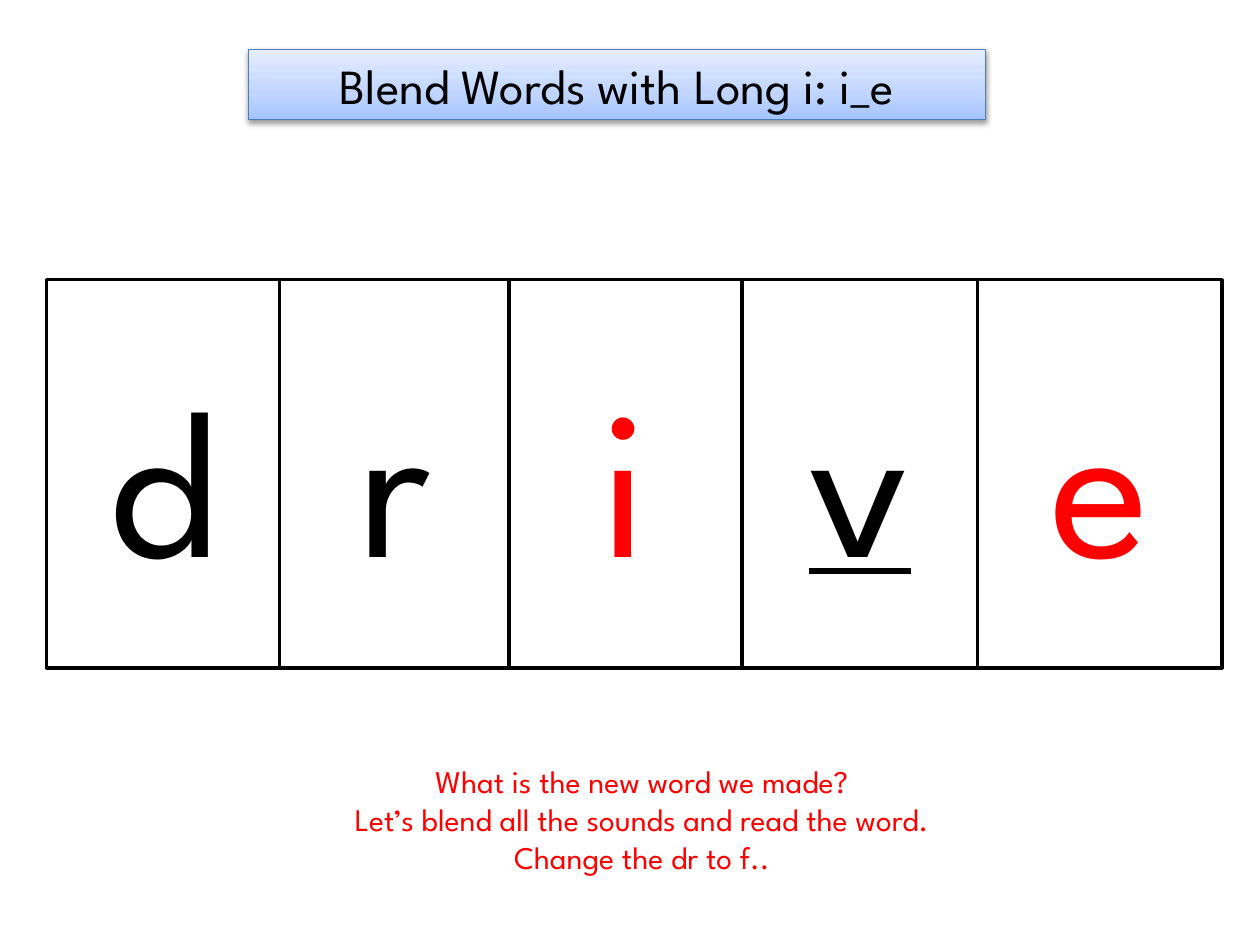
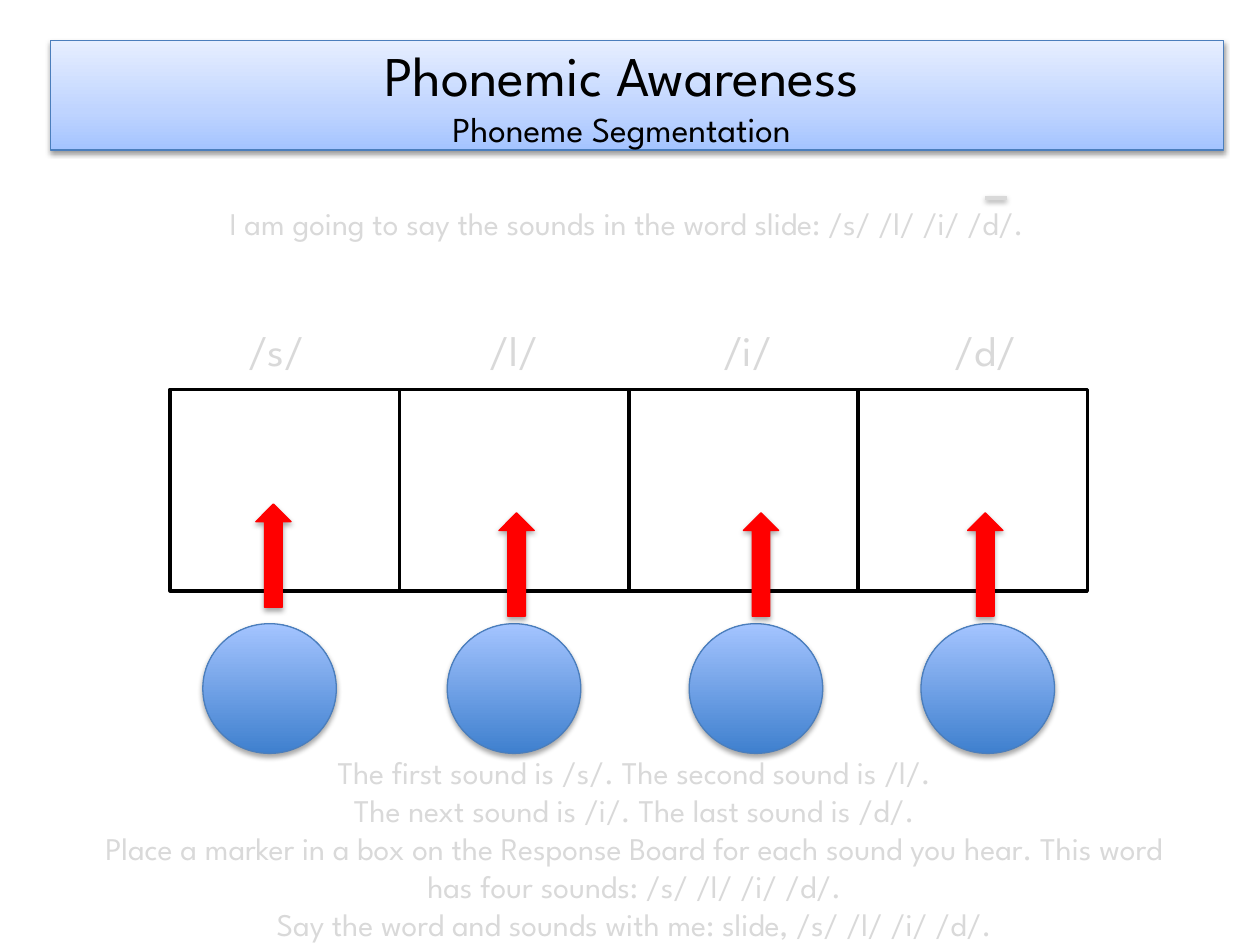
from dataclasses import dataclass
from itertools import pairwise

from lxml import etree
from pptx import Presentation
from pptx.dml.color import RGBColor
from pptx.enum.shapes import MSO_CONNECTOR, MSO_SHAPE as Shape
from pptx.enum.text import MSO_ANCHOR as Anchor, MSO_AUTO_SIZE as AutoSize, PP_ALIGN as Align
from pptx.oxml.ns import nsdecls, qn
from pptx.util import Inches, Pt


@dataclass(frozen=True)
class Theme:
    font: str = "League Spartan"
    ink: str = "000000"
    paper: str = "FFFFFF"
    accent: str = "FF0000"
    muted: str = "D9D9D9"
    edge: str = "4B7EBC"
    band: tuple = ((0, "A4C4FF"), (35, "BFD4FF"), (100, "E6EEFF"))
    marker: tuple = ((0, "3F80CE"), (100, "A4C4FF"))
    letter_size: int = 120
    title_size: int = 32
    word_title_size: int = 28
    label_size: int = 24
    subtitle_size: int = 20
    body_size: int = 18
    thin: float = 0.75
    thick: float = 2


class Deck:
    def __init__(self, theme):
        self.theme = theme
        self.prs = Presentation()
        self.prs.slide_width, self.prs.slide_height = Inches(10), Inches(7.5)
        self.slide = None

    def new_slide(self):
        self.slide = self.prs.slides.add_slide(self.prs.slide_layouts[5])

    def style_text(self, tf, lines, sizes, color, align=Align.CENTER):
        """Fill a frame with lines; sizes holds one type size per line."""
        tf.word_wrap = True
        tf.text = "\n".join(lines)
        for p, size in zip(tf.paragraphs, sizes):
            p.alignment = align
            for r in p.runs:
                r.font.name = self.theme.font
                r.font.size = Pt(size)
                r.font.color.rgb = RGBColor.from_string(color)

    def outline(self, sp, color, width):
        sp.line.color.rgb = RGBColor.from_string(color)
        sp.line.width = Pt(width)

    def gradient(self, sp, stops):
        """Fill from bottom to top; call before the outline is set."""
        marks = "".join(f'<a:gs pos="{pos * 1000}"><a:srgbClr val="{color}"/></a:gs>'
                        for pos, color in stops)
        sp._element.spPr.append(etree.fromstring(
            f'<a:gradFill {nsdecls("a")} rotWithShape="1"><a:gsLst>{marks}</a:gsLst>'
            '<a:lin ang="16200000" scaled="0"/></a:gradFill>'))

    def shadow(self, sp, alpha, distance):
        """Cast a soft shadow downwards; call after the outline is set."""
        spPr = sp._element.spPr
        for old in spPr.findall(qn("a:effectLst")):
            spPr.remove(old)
        spPr.append(etree.fromstring(
            f'<a:effectLst {nsdecls("a")}><a:outerShdw blurRad="{Pt(3.1)}" '
            f'dist="{Pt(distance)}" dir="5400000" rotWithShape="0"><a:srgbClr '
            f'val="{self.theme.ink}"><a:alpha val="{alpha * 1000}"/></a:srgbClr>'
            '</a:outerShdw></a:effectLst>'))

    def title(self, lines, sizes, box, preset="rect"):
        sp = self.slide.shapes.title
        sp.left, sp.top, sp.width, sp.height = map(Inches, box)
        sp._element.spPr.append(etree.fromstring(
            f'<a:prstGeom {nsdecls("a")} prst="{preset}"><a:avLst/></a:prstGeom>'))
        self.gradient(sp, self.theme.band)
        self.outline(sp, self.theme.edge, self.theme.thin)
        self.shadow(sp, 38, 1.6)
        tf = sp.text_frame
        tf.auto_size = AutoSize.NONE
        tf.vertical_anchor = Anchor.MIDDLE
        self.style_text(tf, lines, sizes, self.theme.ink)
        return tf

    def shape(self, kind, box):
        sp = self.slide.shapes.add_shape(kind, *map(Inches, box))
        sp.shadow.inherit = False
        return sp

    def sound_box(self, box, letter="", color=None, underline=False):
        sp = self.shape(Shape.RECTANGLE, box)
        sp.fill.solid()
        sp.fill.fore_color.rgb = RGBColor.from_string(self.theme.paper)
        self.outline(sp, self.theme.ink, self.theme.thick)
        if letter:
            tf = sp.text_frame
            tf.vertical_anchor = Anchor.MIDDLE
            self.style_text(tf, [letter], [self.theme.letter_size], color)
            if underline:
                tf.paragraphs[0].runs[0].font.underline = True

    def marker(self, box):
        sp = self.shape(Shape.OVAL, box)
        self.gradient(sp, self.theme.marker)
        self.outline(sp, self.theme.edge, self.theme.thin)
        self.shadow(sp, 35, 1.8)

    def up_arrow(self, box):
        sp = self.shape(Shape.RIGHT_ARROW, box)
        sp.rotation = 270
        sp.fill.solid()
        sp.fill.fore_color.rgb = RGBColor.from_string(self.theme.accent)
        self.outline(sp, self.theme.accent, self.theme.thin)
        self.shadow(sp, 35, 1.8)

    def text(self, lines, size, color, box, align=Align.CENTER):
        tf = self.slide.shapes.add_textbox(*map(Inches, box)).text_frame
        self.style_text(tf, lines, [size] * len(lines), color, align)
        tf.auto_size = AutoSize.SHAPE_TO_FIT_TEXT

    def macron(self, x, y, width):
        """Draw the bar that marks a long vowel."""
        line = self.slide.shapes.add_connector(
            MSO_CONNECTOR.STRAIGHT, *map(Inches, (x, y, x + width, y)))
        self.outline(line, self.theme.muted, self.theme.thick)
        self.shadow(line, 38, 1.6)


def blend_slide(deck):
    theme = deck.theme
    deck.new_slide()
    deck.title(["Blend Words with Long i: i_e"], [theme.word_title_size],
               (1.97, 0.39, 5.85, 0.56))
    edges = (0.37, 2.22, 4.04, 5.89, 7.76, 9.7)
    for letter, (left, right) in zip("drive", pairwise(edges)):
        color = theme.accent if letter in "ie" else theme.ink
        deck.sound_box((left, 2.22, right - left, 3.08), letter, color,
                       underline=letter == "v")
    deck.text(["What is the new word we made?",
               "Let’s blend all the sounds and read the word.",
               "Change the dr to f.."],
              theme.body_size, theme.accent, (1.61, 6, 6.97, 1.01))


def segmentation_slide(deck):
    theme = deck.theme
    deck.new_slide()
    tf = deck.title(["Phonemic Awareness", "Phoneme Segmentation"],
                    [theme.title_size, theme.subtitle_size],
                    (0.4, 0.32, 9.31, 0.87), "roundRect")
    tf.paragraphs[0]._p.get_or_add_pPr().set("marR", str(Inches(0.24)))
    deck.text(["I am going to say the sounds in the word slide: /s/ /l/ /i/ /d/."],
              theme.body_size, theme.muted, (0.57, 1.57, 8.81, 0.4))
    deck.macron(7.82, 1.57, 0.17)

    # sound, label left, marker left, arrow left, arrow top
    columns = (("/s/", 1.87, 1.61, 1.76, 4.27),
               ("/l/", 3.79, 3.55, 3.69, 4.34),
               ("/i/", 5.64, 5.47, 5.63, 4.34),
               ("/d/", 7.48, 7.31, 7.41, 4.34))
    box_width = 1.82
    for i, (sound, label_x, marker_x, arrow_x, arrow_y) in enumerate(columns):
        deck.sound_box((1.35 + i * box_width, 3.09, box_width, 1.6))
        deck.marker((marker_x, 4.95, 1.06, 1.03))
        deck.up_arrow((arrow_x, arrow_y, 0.82, 0.28))
        deck.text([sound], theme.label_size, theme.muted,
                  (label_x, 2.53, 0.88, 0.5), Align.LEFT)

    deck.text(["The first sound is /s/. The second sound is /l/.",
               "The next sound is /i/. The last sound is /d/.",
               "Place a marker in a box on the Response Board for each sound you hear. "
               "This word has four sounds: /s/ /l/ /i/ /d/.",
               "Say the word and sounds with me: slide, /s/ /l/ /i/ /d/."],
              theme.body_size, theme.muted, (0.63, 5.93, 8.81, 1.62))


def main():
    deck = Deck(Theme())
    blend_slide(deck)
    segmentation_slide(deck)
    deck.prs.save("out.pptx")


if __name__ == "__main__":
    main()
